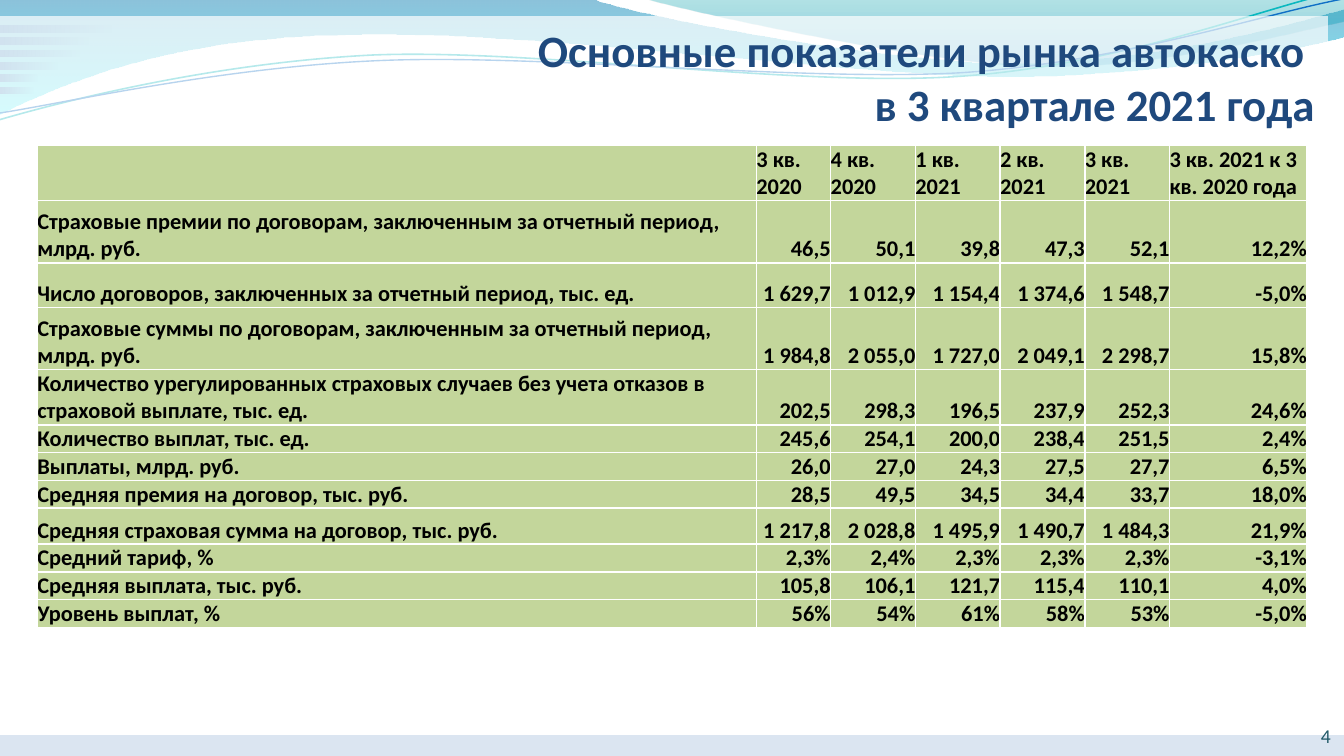
from dataclasses import dataclass
from math import cos, radians, sin
from typing import NamedTuple

from lxml.etree import SubElement as Sub
from pptx import Presentation
from pptx.dml.color import RGBColor as RGB
from pptx.enum.shapes import MSO_SHAPE as Kind
from pptx.enum.text import MSO_ANCHOR as Anchor, PP_ALIGN as Align
from pptx.oxml.ns import qn
from pptx.util import Pt

WHITE = RGB(0xFF, 0xFF, 0xFF)
BLACK = RGB(0, 0, 0)
NAVY = RGB(0x1F, 0x49, 0x7D)
TEAL = RGB(0x21, 0x59, 0x68)
GREEN = RGB(0xC3, 0xD6, 0x9B)
STEEL = RGB(0x4F, 0x81, 0xBD)
DEEP = RGB(0x00, 0x79, 0xAF)
CYAN = RGB(0x00, 0xEB, 0xF8)
SEA = RGB(0x00, 0xA1, 0xA9)
LAKE = RGB(0x00, 0x8B, 0xBF)
AQUA = RGB(0x0A, 0xB8, 0xBF)
BLUE = RGB(0x0F, 0x6F, 0xC6)
MIST = RGB(0xD1, 0xE2, 0xEF)
HAZE = RGB(0xD1, 0xE2, 0xEE)

TITLE = dict(name="Calibri", size=Pt(24), bold=True)
PAGE = dict(name="Calibri", size=Pt(10.5), bold=False)
CELL = dict(name="Calibri", size=Pt(12), bold=True)
BARE = dict(margin_left=0, margin_right=0, margin_top=0, margin_bottom=0,
            vertical_anchor=Anchor.BOTTOM)
TILT = -2.7
HUB = 359.3, 31.5


class Stop(NamedTuple):
    color: RGB
    alpha: int = 100
    pos: float = 1


class Row(NamedTuple):
    label: str
    high: float
    vals: str


@dataclass
class Wave:
    """Steps hold a point (2 numbers) or a cubic curve (6 numbers)."""
    steps: list
    stops: tuple = ()
    color: RGB = WHITE
    width: float = 0


WAVES = [
    Wave([(0, 0), (316.8, -0.7), (342.7, 9.4, 478.1, 33.8, 545.8, 33.8),
          (614.2, 33.8, 689.8, 13.7, 720, 5), (720.7, 19.4),
          (707.8, 23.8, 626.4, 41, 537.1, 41),
          (447.8, 40.3, 275, 15.1, 185, 18.7),
          (92.9, 19.4, 33.1, 44.6, -0.7, 61.2)],
         (Stop(DEEP, 45, 0), Stop(CYAN, 55))),
    Wave([(344.9, -0.7), (366.5, 5.8, 491, 33.1, 553.7, 35.3),
          (616.3, 37.4, 691.9, 17.3, 720, 11.5), (720, 0)],
         (Stop(SEA, 30, 0), Stop(LAKE, 45, 0.8))),
    Wave([(0, 64.1), (34.6, 54, 113.8, 33.8, 199.4, 29.5),
          (285.1, 25.9, 426.2, 46.8, 512.6, 41),
          (599.8, 35.3, 676.1, 4.3, 718.6, -5)], color=AQUA, width=0.85),
    Wave([(0, 60.5), (33.8, 55.4, 118.1, 36, 203.8, 32.4),
          (290.2, 28.8, 429.8, 43.9, 515.5, 38.9),
          (601.9, 33.1, 677.5, 7.2, 720, -0.7)], color=BLUE, width=0.75),
]
STRIPES = [59.8, 47.5, 42.5, 31, 20.2, 18]
COLS = [385.2, 39.8] + [45.4] * 4 + [73.6]
ROWS = [
    Row("", 29.5, "3 кв. 2020|4 кв. 2020|1 кв. 2021|2 кв. 2021|3 кв. 2021|3 кв. 2021 к 3 кв. 2020 года"),
    Row("Страховые премии по договорам, заключенным за отчетный период, млрд. руб.",
        33.3, "46,5|50,1|39,8|47,3|52,1|12,2%"),
    Row("Число договоров, заключенных за отчетный период, тыс. ед.",
        24, "1 629,7|1 012,9|1 154,4|1 374,6|1 548,7|-5,0%"),
    Row("Страховые суммы по договорам, заключенным за отчетный период, млрд. руб.",
        33.3, "1 984,8|2 055,0|1 727,0|2 049,1|2 298,7|15,8%"),
    Row("Количество урегулированных страховых случаев без учета отказов в страховой выплате, тыс. ед.",
        29.6, "202,5|298,3|196,5|237,9|252,3|24,6%"),
    Row("Количество выплат, тыс. ед.", 14.9, "245,6|254,1|200,0|238,4|251,5|2,4%"),
    Row("Выплаты, млрд. руб.", 14.9, "26,0|27,0|24,3|27,5|27,7|6,5%"),
    Row("Средняя премия на договор, тыс. руб.", 14.9, "28,5|49,5|34,5|34,4|33,7|18,0%"),
    Row("Средняя страховая сумма на договор, тыс. руб.",
        19.2, "1 217,8|2 028,8|1 495,9|1 490,7|1 484,3|21,9%"),
    Row("Средний тариф, %", 14.9, "2,3%|2,4%|2,3%|2,3%|2,3%|-3,1%"),
    Row("Средняя выплата, тыс. руб.", 14.9, "105,8|106,1|121,7|115,4|110,1|4,0%"),
    Row("Уровень выплат, %", 14.9, "56%|54%|61%|58%|53%|-5,0%"),
]


def apply(item, form: dict) -> None:
    for key, val in form.items():
        setattr(item, key, val)


def paint(shape, stops: tuple, angle: float = 0) -> None:
    """Fill with one colour or a two-stop gradient, with opacity."""
    shape.shadow.inherit = False
    if len(stops) == 1:
        shape.fill.solid()
        shape.fill.fore_color.rgb = stops[0].color
    else:
        shape.fill.gradient()
        shape.fill.gradient_angle = angle
        for mark, stop in zip(shape.fill.gradient_stops, stops):
            mark.color.rgb, mark.position = stop.color, stop.pos
    for node, stop in zip(shape._element.spPr.iter(qn("a:srgbClr")), stops):
        Sub(node, qn("a:alpha"), val=str(stop.alpha * 1000))
    shape.line.fill.background()


def level(x: float, y: float) -> tuple:
    """Undo the tilt, which the shape's rotation adds again."""
    a, dx, dy = radians(-TILT), x - HUB[0], y - HUB[1]
    return HUB[0] + dx * cos(a) - dy * sin(a), HUB[1] + dx * sin(a) + dy * cos(a)


def bend(shape, steps: list) -> None:
    """Join the three points of each curve step into one cubic curve."""
    lines = iter(list(shape._element.iter(qn("a:lnTo"))))
    for step in steps[1:]:
        first = next(lines)
        if len(step) == 6:
            first.tag = qn("a:cubicBezTo")
            for line in (next(lines), next(lines)):
                first.append(line[0])
                line.getparent().remove(line)


def draw_wave(slide, wave: Wave) -> None:
    closed = bool(wave.stops)
    dots = [step[i:i + 2] for step in wave.steps for i in range(0, len(step), 2)]
    if not closed:
        dots = [level(*dot) for dot in dots]
    dots = [(Pt(x), Pt(y)) for x, y in dots]
    pen = slide.shapes.build_freeform(*dots[0], scale=1.0)
    pen.add_line_segments(dots[1:], close=closed)
    shape = pen.convert_to_shape()
    bend(shape, wave.steps)
    if closed:
        paint(shape, wave.stops, 270)
    else:
        shape.rotation = TILT
        shape.shadow.inherit = False
        shape.fill.background()
        shape.line.color.rgb, shape.line.width = wave.color, Pt(wave.width)


def draw_bar(slide, box: tuple, *stops: Stop) -> None:
    paint(slide.shapes.add_shape(Kind.RECTANGLE, *map(Pt, box)), stops)


def write(para, text: str, form: dict, color: RGB, align: Align) -> None:
    para.alignment = align
    run = para.add_run()
    run.text = text
    apply(run.font, form)
    run.font.color.rgb = color


def draw_text(slide, box: tuple, lines: list, form: dict, color: RGB) -> None:
    frame = slide.shapes.add_textbox(*map(Pt, box)).text_frame
    apply(frame, dict(word_wrap=True, vertical_anchor=Anchor.MIDDLE))
    for i, line in enumerate(lines):
        para = frame.add_paragraph() if i else frame.paragraphs[0]
        write(para, line, form, color, Align.RIGHT)


def style_cell(cell) -> None:
    apply(cell, BARE)
    props = cell._tc.get_or_add_tcPr()
    for side in ("a:lnL", "a:lnR", "a:lnT", "a:lnB"):
        edge = Sub(props, qn(side), w=str(Pt(1)))
        Sub(Sub(edge, qn("a:solidFill")), qn("a:srgbClr"), val=str(WHITE))
    cell.fill.solid()
    cell.fill.fore_color.rgb = GREEN


def draw_table(slide, left: float, top: float) -> None:
    size = sum(COLS), sum(row.high for row in ROWS)
    table = slide.shapes.add_table(len(ROWS), len(COLS), *map(Pt, (left, top, *size))).table
    apply(table, dict(first_row=False, horz_banding=False))
    for col, wide in zip(table.columns, COLS):
        col.width = Pt(wide)
    for r, row in enumerate(ROWS):
        table.rows[r].height = Pt(row.high)
        for c, text in enumerate([row.label, *row.vals.split("|")]):
            cell = table.cell(r, c)
            style_cell(cell)
            if text:
                align = Align.RIGHT if r and c else Align.LEFT
                write(cell.text_frame.paragraphs[0], text, CELL, BLACK, align)


def main() -> None:
    deck = Presentation()
    apply(deck, dict(slide_width=Pt(720), slide_height=Pt(405)))
    slide = deck.slides.add_slide(deck.slide_layouts[6])

    # Header waves under a pale veil
    for wave in WAVES:
        draw_wave(slide, wave)
    draw_bar(slide, (0, 8.6, 711.4, 62), Stop(WHITE, 70))

    # Fading stripes and footer band
    for i, wide in enumerate(STRIPES):
        draw_bar(slide, (0, 13.7 + 6.6 * i, wide, 3.6), Stop(MIST, 100, 0), Stop(HAZE, 0))
    draw_bar(slide, (0, 393.8, 720, 11.2), Stop(STEEL, 20))

    # Page number, title and table
    draw_text(slide, (552.2, 383.5, 167.8, 21.6), ["4"], PAGE, TEAL)
    draw_text(slide, (172.8, 9.7, 538.6, 62.6),
              ["Основные показатели рынка автокаско ", "в 3 квартале 2021 года"], TITLE, NAVY)
    draw_table(slide, 20, 78)
    deck.save("out.pptx")


if __name__ == "__main__":
    main()
